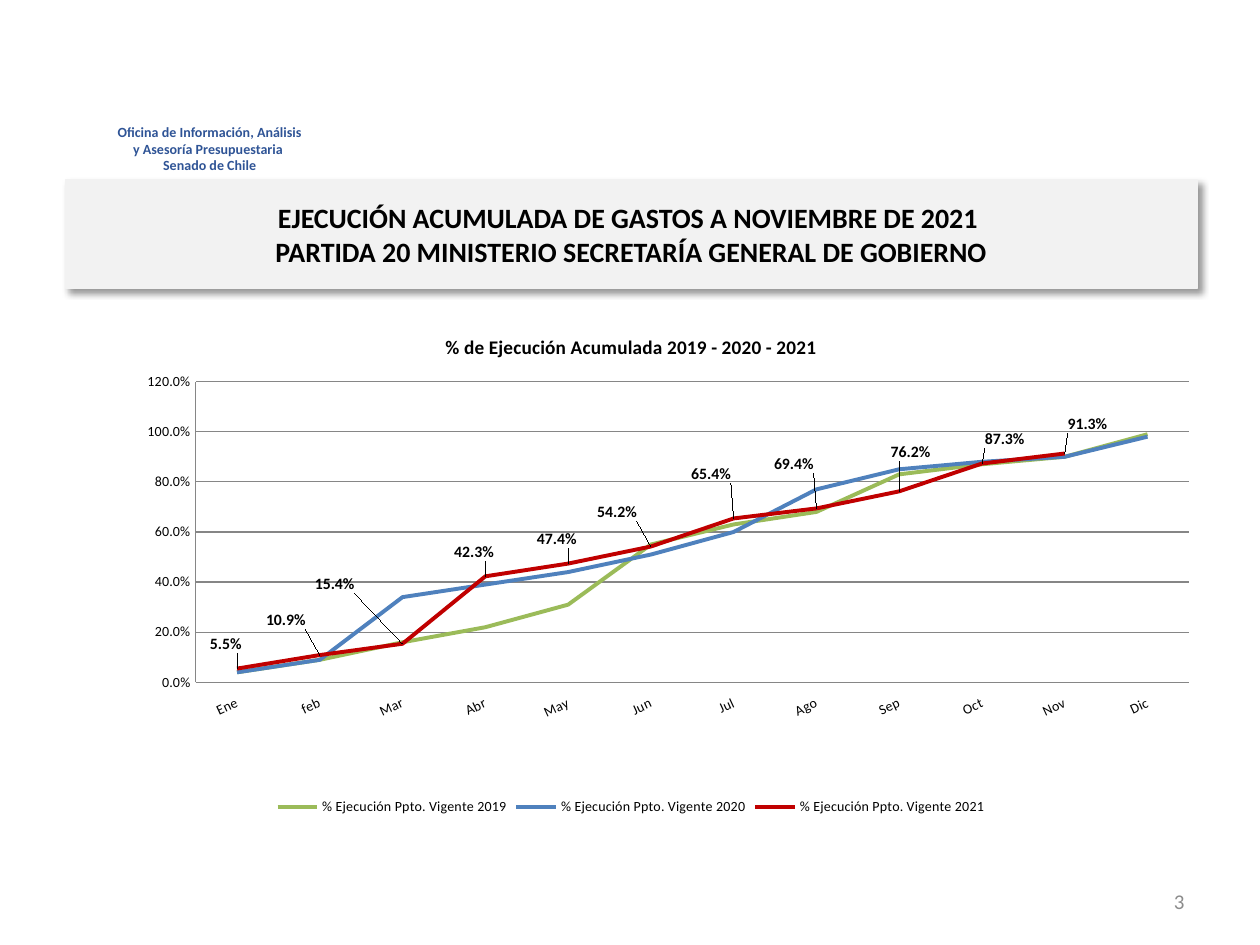
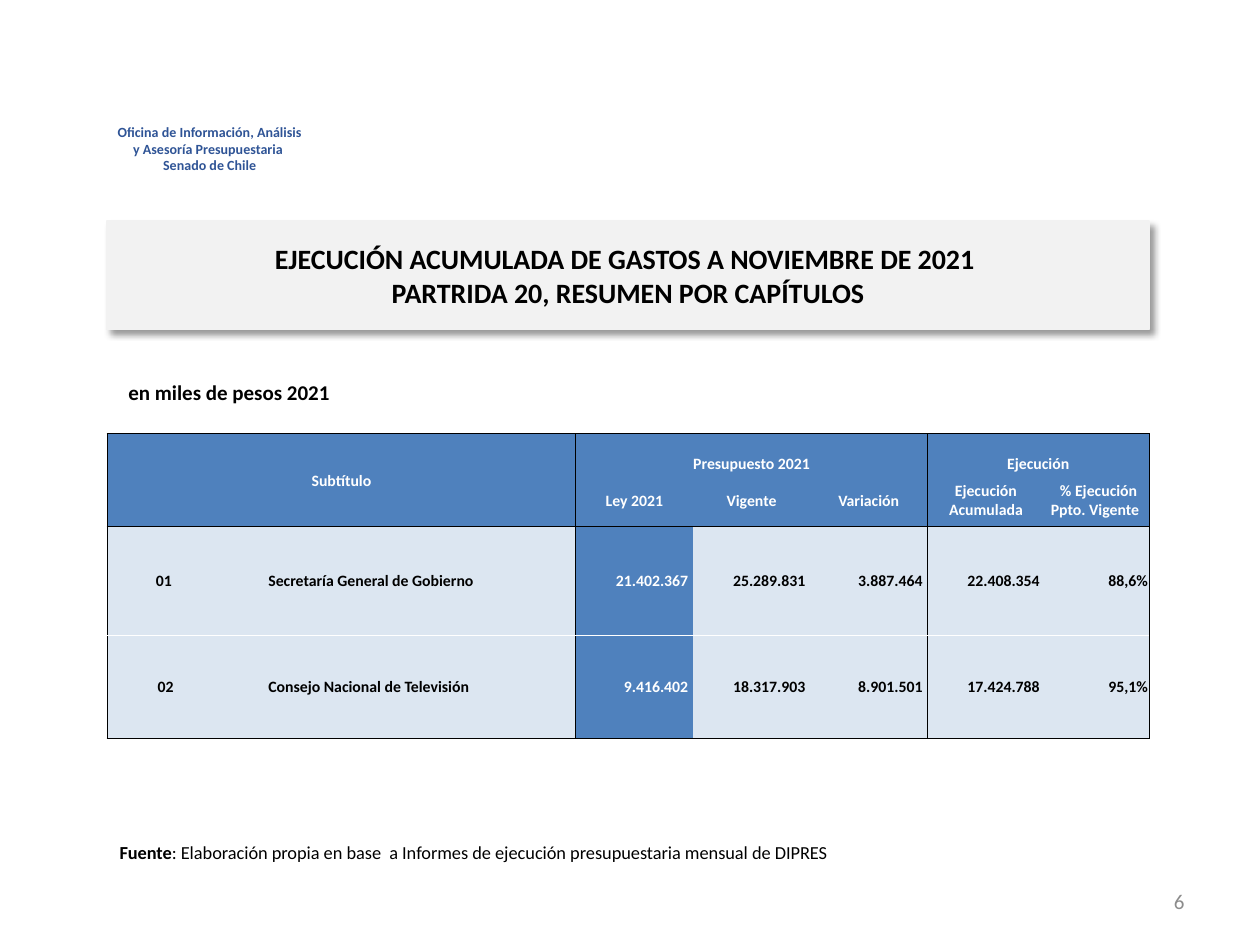
from lxml import etree
from pptx import Presentation
from pptx import util as u
from pptx.chart import data as chart_data
from pptx.dml.color import RGBColor
from pptx.enum import chart as charts, shapes, text
from pptx.oxml import parse_xml
from pptx.oxml.ns import nsdecls, qn

COLORS = {
    "black": "000000", "white": "FFFFFF", "band": "F2F2F2", "office": "2F5496",
    "number": "8C8C8C", "grid": "868686", "header": "4F81BD", "body": "DCE6F1",
    "2019": "9BBB59", "2020": "4F81BD", "2021": "C00000",
}
RGB = {name: RGBColor.from_string(value) for name, value in COLORS.items()}
FONT = "Calibri"
LEFT, CENTER, RIGHT, JUSTIFY = (text.PP_ALIGN.LEFT, text.PP_ALIGN.CENTER,
                                text.PP_ALIGN.RIGHT, text.PP_ALIGN.JUSTIFY)
MIDDLE, BOTTOM = text.MSO_ANCHOR.MIDDLE, text.MSO_ANCHOR.BOTTOM

deck = Presentation()
deck.slide_width, deck.slide_height = u.Inches(10), u.Inches(7.5)
COLUMN = deck.slide_width / 100
ROW = deck.slide_height / 75


def area(left, top, columns, rows):
    """Turn places on the 100 by 75 page grid into lengths."""
    return [int(left * COLUMN), int(top * ROW), int(columns * COLUMN), int(rows * ROW)]


def write(frame, words, size, color="black", bold=False, align=LEFT):
    """Fill a text frame and give all its runs one style."""
    frame.text = words
    frame.word_wrap = True
    for para in frame.paragraphs:
        para.alignment = align
        for span in para.runs:
            span.font.name = FONT
            span.font.size = u.Pt(size)
            span.font.bold = bold
            span.font.color.rgb = RGB[color]


# What both pages share: office name, title band and page number
HEADLINE = "EJECUCIÓN ACUMULADA DE GASTOS A NOVIEMBRE DE 2021 \v"
OFFICE = "Oficina de Información, Análisis y Asesoría Presupuestaria \nSenado de Chile"
openings = [
    ("PARTIDA 20 MINISTERIO SECRETARÍA GENERAL DE GOBIERNO", (5.2, 14.3, 89.8, 8.6), "3"),
    ("PARTRIDA 20, RESUMEN POR CAPÍTULOS", (8.5, 17.55, 82.7, 8.6), "6"),
]
for subject, band_area, number in openings:
    page = deck.slides.add_slide(deck.slide_layouts[6])

    office = page.shapes.add_textbox(*area(8.1, 9.3, 17.1, 4.8))
    write(office.text_frame, OFFICE, 8, "office", True, CENTER)

    band = page.shapes.add_shape(shapes.MSO_SHAPE.RECTANGLE, *area(*band_area))
    band.fill.solid()
    band.fill.fore_color.rgb = RGB["band"]
    band.line.color.rgb = RGB["band"]
    band.line.width = u.Pt(0.75)
    band.shadow.inherit = False
    band._element.spPr.find(qn("a:effectLst")).append(parse_xml(
        f'<a:outerShdw {nsdecls("a")} blurRad="50800" dist="38100" dir="2700000" '
        'algn="tl" rotWithShape="0"><a:srgbClr val="000000"><a:alpha val="40000"/>'
        '</a:srgbClr></a:outerShdw>'))
    band.text_frame.vertical_anchor = MIDDLE
    write(band.text_frame, HEADLINE + subject, 16, "black", True, CENTER)

    footer = page.shapes.add_textbox(*area(71.7, 69.5, 23.3, 4))
    footer.text_frame.vertical_anchor = MIDDLE
    write(footer.text_frame, number, 12, "number", align=RIGHT)

chart_page, table_page = deck.slides

# Accumulated execution by month
months = ["Ene", "feb", "Mar", "Abr", "May", "Jun",
          "Jul", "Ago", "Sep", "Oct", "Nov", "Dic"]
execution = {
    "2019": [0.04, 0.09, 0.16, 0.22, 0.31, 0.55, 0.63, 0.68, 0.83, 0.87, 0.9, 0.99],
    "2020": [0.04, 0.09, 0.34, 0.39, 0.44, 0.51, 0.6, 0.77, 0.85, 0.88, 0.9, 0.98],
    "2021": [0.055, 0.109, 0.154, 0.423, 0.474, 0.542, 0.654, 0.694, 0.762, 0.873,
             0.913, None],
}
# Shift of each 2021 label, as shares of the chart's width and height
label_shifts = [(-0.01, -0.02), (-0.03, -0.04), (-0.06, -0.09), (-0.01, -0.02),
                (-0.01, -0.02), (-0.03, -0.04), (-0.02, -0.06), (-0.02, -0.06),
                (0.01, -0.05), (0.02, -0.02), (0.02, -0.03)]

figures = chart_data.CategoryChartData(number_format="0.0%")
figures.categories = months
for year, shares in execution.items():
    figures.add_series(f"% Ejecución Ppto. Vigente {year}", shares)
chart = chart_page.shapes.add_chart(
    charts.XL_CHART_TYPE.LINE, *area(5.2, 24.9, 89.8, 40.2), figures).chart
chart.font.name, chart.font.size = FONT, u.Pt(10)
chart.font.color.rgb = RGB["black"]

chart.has_title = True
write(chart.chart_title.text_frame, "% de Ejecución Acumulada 2019 - 2020 - 2021",
      11, bold=True, align=CENTER)
chart.has_legend = True
chart.legend.position = charts.XL_LEGEND_POSITION.BOTTOM
chart.legend.include_in_layout = False
chart.legend.font.size = u.Pt(8)

for axis in (chart.category_axis, chart.value_axis):
    axis.major_tick_mark = axis.minor_tick_mark = charts.XL_TICK_MARK.NONE
    axis.tick_labels.font.size = u.Pt(8)
    axis.format.line.color.rgb = RGB["grid"]
chart.category_axis.tick_label_position = charts.XL_TICK_LABEL_POSITION.LOW
chart.category_axis._element.find(qn("c:txPr")).find(qn("a:bodyPr")).set("rot", "-1500000")
chart.value_axis.minimum_scale, chart.value_axis.maximum_scale = 0, 1.2
chart.value_axis.major_unit = 0.2
chart.value_axis.tick_labels.number_format = "0.0%"
chart.value_axis.tick_labels.number_format_is_linked = False
chart.value_axis.major_gridlines.format.line.color.rgb = RGB["grid"]

plot = chart.plots[0]
plot.vary_by_categories = False
for year, series in zip(execution, plot.series):
    series.smooth = False
    series.marker.style = charts.XL_MARKER_STYLE.NONE
    series.format.line.color.rgb = RGB[year]
    series.format.line.width = u.Pt(2.25)

latest = plot.series[2]
for index, (across, down) in enumerate(label_shifts):
    label = latest.points[index].data_label
    label.font.size, label.font.bold = u.Pt(9), True
    label.position = charts.XL_LABEL_POSITION.ABOVE
    mark = latest.data_labels._element.findall(qn("c:dLbl"))[index]
    mark.find(qn("c:idx")).addnext(parse_xml(
        f'<c:layout {nsdecls("c")}><c:manualLayout><c:x val="{across}"/>'
        f'<c:y val="{down}"/></c:manualLayout></c:layout>'))
labels = latest.data_labels
labels.show_value = True
labels.font.size, labels.font.bold = u.Pt(9), True
labels.number_format, labels.number_format_is_linked = "0.0%", False
# Moved labels get no leader lines
labels._element.append(parse_xml(
    f'<c:extLst {nsdecls("c")}><c:ext uri="{{CE6537A1-D6FC-4f65-9D91-7224C49458BB}}" '
    'xmlns:c15="http://schemas.microsoft.com/office/drawing/2012/chart">'
    '<c15:showLeaderLines val="0"/></c:ext></c:extLst>'))

plot_area = chart._chartSpace.chart.plotArea
for layout in plot_area.findall(qn("c:layout")):
    plot_area.remove(layout)
plot_area.insert(0, parse_xml(
    f'<c:layout {nsdecls("c")}><c:manualLayout><c:layoutTarget val="inner"/>'
    '<c:xMode val="edge"/><c:yMode val="edge"/><c:x val="0.115"/><c:y val="0.134"/>'
    '<c:w val="0.878"/><c:h val="0.594"/></c:manualLayout></c:layout>'))

# Source and unit of the table
source = table_page.shapes.add_textbox(*area(8.5, 66.3, 82.5, 4))
write(source.text_frame, "Fuente", 10.5, bold=True)
detail = source.text_frame.paragraphs[0].add_run()
detail.text = ": Elaboración propia en base  a Informes de ejecución presupuestaria mensual de DIPRES"
detail.font.name, detail.font.size, detail.font.bold = FONT, u.Pt(10.5), False
detail.font.color.rgb = RGB["black"]

unit = table_page.shapes.add_textbox(*area(9.2, 29.6, 81.1, 3.1))
write(unit.text_frame, "en miles de pesos 2021", 12, bold=True)

# Budget and execution by chapter
rows = [
    ["Subtítulo", "", "", "Presupuesto 2021", "", "", "Ejecución", ""],
    ["", "", "", "Ley 2021", "Vigente", "Variación", "Ejecución Acumulada",
     " % Ejecución Ppto. Vigente "],
    ["01 ", "", "Secretaría General de Gobierno", "21.402.367 ", "25.289.831 ",
     "3.887.464 ", "22.408.354 ", "88,6%"],
    ["02", "", "Consejo Nacional de Televisión", "9.416.402 ", "18.317.903 ",
     "8.901.501 ", "17.424.788 ", "95,1%"],
]
widths = [9.3, 3.4, 24.5, 9.3, 9.3, 9.3, 9.3, 8.3]
heights = [3.2, 4.2, 8.6, 8.2]
body_aligns = [CENTER, CENTER, JUSTIFY] + [RIGHT] * 5
LAW = 3
upright_rules = {0: "black", 3: "black", 6: "black", 8: "black"}
level_rules = {0: "black", 2: "black", 3: "white", 4: "black"}
spans = {(0, 0): (2, 3), (0, 3): (1, 3), (0, 6): (1, 2)}

table = table_page.shapes.add_table(
    len(rows), len(widths), *area(8.5, 34.4, sum(widths), sum(heights))).table
table.first_row = table.horz_banding = False
for column, width in zip(table.columns, widths):
    column.width = int(width * COLUMN)
for row, height in zip(table.rows, heights):
    row.height = int(height * ROW)

for r, words in enumerate(rows):
    for c, word in enumerate(words):
        cell = table.cell(r, c)
        heading = r < 2
        dark = heading or c == LAW
        cell.margin_left = cell.margin_right = cell.margin_top = u.Inches(0.01)
        cell.margin_bottom = 0
        cell.vertical_anchor = BOTTOM if r == 0 and c >= LAW else MIDDLE
        write(cell.text_frame, word, 9, "white" if dark else "black", True,
              CENTER if heading else body_aligns[c])
        properties = cell._tc.get_or_add_tcPr()
        deep, wide = spans.get((r, c), (1, 1))
        edges = {"lnL": upright_rules.get(c), "lnR": upright_rules.get(c + wide),
                 "lnT": level_rules.get(r), "lnB": level_rules.get(r + deep)}
        for edge, color in edges.items():
            line = etree.SubElement(properties, qn(f"a:{edge}"), w=str(u.Pt(0.5)))
            if color:
                paint = etree.SubElement(line, qn("a:solidFill"))
                etree.SubElement(paint, qn("a:srgbClr"), val=COLORS[color])
            else:
                etree.SubElement(line, qn("a:noFill"))
        cell.fill.solid()
        cell.fill.fore_color.rgb = RGB["header" if dark else "body"]

for (r, c), (deep, wide) in spans.items():
    table.cell(r, c).merge(table.cell(r + deep - 1, c + wide - 1))

deck.save("out.pptx")
